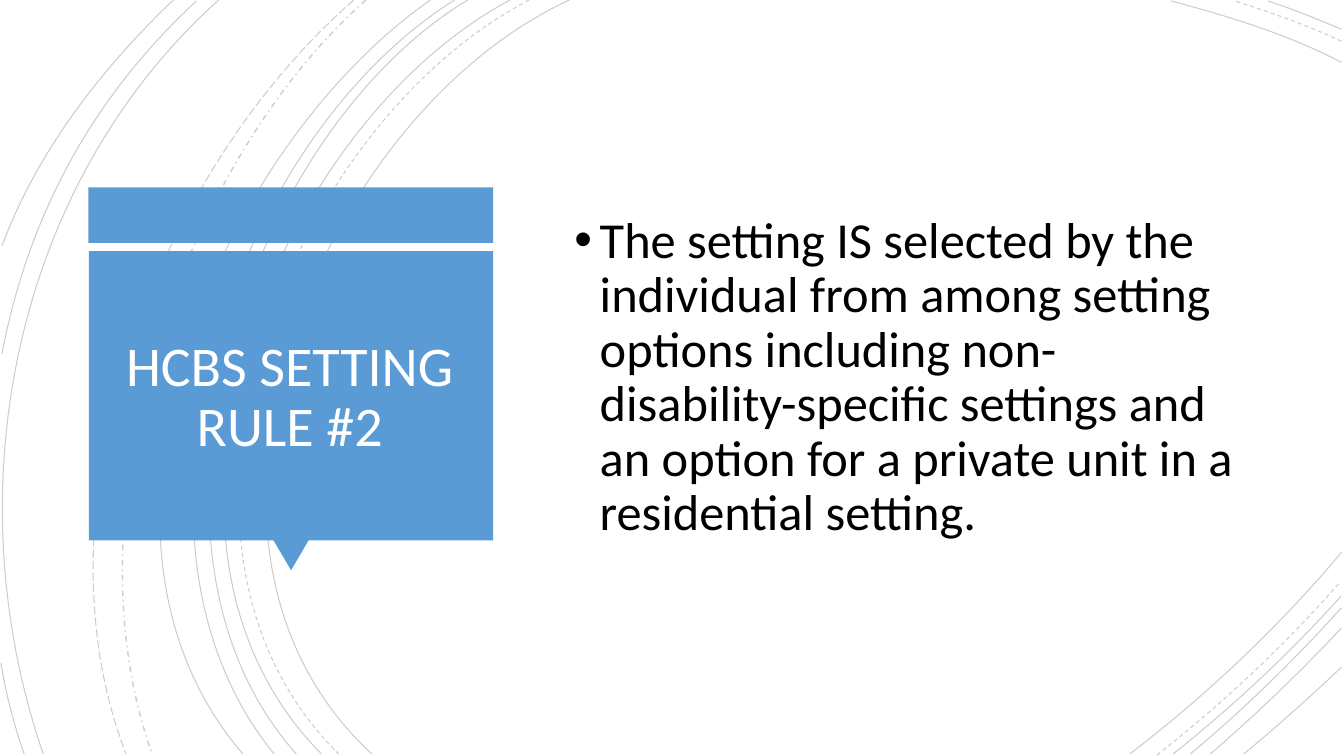
from lxml import etree
from pptx import Presentation
from pptx.dml.color import RGBColor
from pptx.enum import dml, shapes, text
from pptx.oxml import ns
from pptx.util import Cm, Pt

BLUE, WHITE, BLACK = "5B9BD5", "FFFFFF", "000000"
FONT = "Calibri"
SOLID, DASH = dml.MSO_LINE.SOLID, dml.MSO_LINE.DASH
LONG_DASH, DASH_DOT = dml.MSO_LINE.LONG_DASH, dml.MSO_LINE.DASH_DOT

# Background arcs: start, two control points and end, in inches
ARCS = [
    (SOLID, (5.65, 0), (3.15, 1.15), (1.43, 5.4), (3.69, 7.48)),
    (SOLID, (13.31, 0.62), (12.78, 0.34), (12.18, 0.16), (11.62, 0.01)),
    (SOLID, (11.21, 7.48), (11.97, 6.9), (12.69, 6.22), (13.31, 5.48)),
    (DASH, (5.25, 0), (2.85, 1.25), (1.23, 5.37), (3.36, 7.48)),
    (DASH, (13.31, 0.41), (12.97, 0.25), (12.6, 0.12), (12.25, 0.01)),
    (DASH, (11.48, 7.49), (12.13, 6.98), (12.75, 6.4), (13.3, 5.77)),
    (SOLID, (5.06, 0), (2.7, 1.27), (1.1, 5.37), (3.19, 7.48)),
    (SOLID, (13.31, 0.29), (13.07, 0.19), (12.83, 0.09), (12.58, 0.01)),
    (SOLID, (11.64, 7.48), (12.23, 7.01), (12.8, 6.48), (13.31, 5.91)),
    (SOLID, (4.64, 0), (2.44, 1.33), (1.1, 5.41), (2.94, 7.48)),
    (SOLID, (11.81, 7.48), (12.34, 7.04), (12.84, 6.55), (13.31, 6.03)),
    (SOLID, (4.51, 0), (2.31, 1.38), (0.97, 5.33), (2.72, 7.48)),
    (SOLID, (12.01, 7.48), (12.46, 7.09), (12.9, 6.67), (13.31, 6.23)),
    (SOLID, (4.27, 0), (2.17, 1.47), (0.53, 5.29), (2.41, 7.48)),
    (SOLID, (12.34, 7.48), (12.67, 7.21), (12.99, 6.92), (13.31, 6.62)),
    (DASH_DOT, (3.63, 0), (1.76, 1.66), (0.65, 5.09), (1.51, 7.48)),
    (LONG_DASH, (3.51, 0), (1.57, 1.69), (0.29, 4.99), (1.25, 7.48)),
    (SOLID, (2.17, 0), (0.11, 1.85), (-0.46, 4.9), (0.43, 7.48)),
    (SOLID, (1.95, 0.01), (0.92, 0.96), (0.28, 2.14), (0.02, 3.51)),
    (SOLID, (0.01, 6.58), (0.06, 6.89), (0.14, 7.19), (0.24, 7.48)),
    (SOLID, (1.72, 0), (1, 0.69), (0.37, 1.5), (0.02, 2.44)),
]


def rgb(hex_color):
    return RGBColor.from_string(hex_color)


def add_arc(parent, dash, *points):
    """Draw a faint cubic Bézier curve."""
    start, *rest = [(Cm(x * 2.54), Cm(y * 2.54)) for x, y in points]
    builder = parent.build_freeform(*start, scale=1)
    builder.add_line_segments(rest, close=False)
    sp = builder.convert_to_shape()
    sp.shadow.inherit = False
    sp.fill.background()
    sp.line.width = Pt(1 if dash == DASH_DOT else 0.75)
    sp.line.dash_style = dash
    sp.line.color.rgb = rgb(BLACK)
    color = sp.line._ln.find(".//" + ns.qn("a:srgbClr"))
    etree.SubElement(color, ns.qn("a:alpha"), val="20000")

    # Turn the three straight segments into one curve
    path = sp._element.find(".//" + ns.qn("a:path"))
    curve = etree.SubElement(path, ns.qn("a:cubicBezTo"))
    for segment in path.findall(ns.qn("a:lnTo")):
        curve.append(segment[0])
        path.remove(segment)


def add_block(parent, kind, left, top, width, height, rotation=0):
    sp = parent.add_shape(kind, Cm(left), Cm(top), Cm(width), Cm(height))
    sp.shadow.inherit = False
    sp.fill.solid()
    sp.fill.fore_color.rgb = rgb(BLUE)
    sp.line.fill.background()
    sp.rotation = rotation


def fill_placeholder(slide, sp, box, words, size, color, align):
    """Place the placeholder in front of the artwork and write its text."""
    sp.left, sp.top, sp.width, sp.height = map(Cm, box)
    slide.shapes._spTree.append(sp._element)
    tf = sp.text_frame
    tf.word_wrap = True
    tf.auto_size = text.MSO_AUTO_SIZE.NONE
    tf.vertical_anchor = text.MSO_ANCHOR.MIDDLE
    p = tf.paragraphs[0]
    p.alignment = align
    p.line_spacing = 0.9
    r = p.add_run()
    r.text = words
    r.font.name, r.font.size = FONT, Pt(size)
    r.font.color.rgb = rgb(color)
    return p


def add_bullet(p, indent):
    p.space_before = Pt(10)
    pPr = p._p.get_or_add_pPr()
    pPr.set("marL", str(Cm(indent)))
    pPr.set("indent", str(-Cm(indent)))
    etree.SubElement(pPr, ns.qn("a:buFont"), typeface="Arial")
    etree.SubElement(pPr, ns.qn("a:buChar"), char="•")


def main():
    prs = Presentation()
    prs.slide_width, prs.slide_height = Cm(33.87), Cm(19.05)
    slide = prs.slides.add_slide(prs.slide_layouts[1])
    slide.background.fill.solid()
    slide.background.fill.fore_color.rgb = rgb(WHITE)

    arcs = slide.shapes.add_group_shape().shapes
    for arc in ARCS:
        add_arc(arcs, *arc)

    panel = slide.shapes.add_group_shape().shapes
    rect, triangle = shapes.MSO_SHAPE.RECTANGLE, shapes.MSO_SHAPE.ISOSCELES_TRIANGLE
    add_block(panel, rect, 2.23, 4.72, 10.2, 1.4)
    add_block(panel, triangle, 6.89, 13.61, 0.89, 0.76, rotation=180)
    add_block(panel, rect, 2.24, 6.33, 10.19, 7.29)

    fill_placeholder(slide, slide.shapes.title, (2.51, 6.71, 9.58, 6.65),
                     "HCBS SETTING RULE #2", 40, WHITE, text.PP_ALIGN.CENTER)
    p = fill_placeholder(
        slide, slide.placeholders[1], (14.22, 2.24, 17.45, 14.58),
        "The setting IS selected by the individual from among setting options "
        "including non-disability-specific settings and an option for a private "
        "unit in a residential setting.", 36, BLACK, text.PP_ALIGN.LEFT)
    add_bullet(p, 0.64)

    prs.save("out.pptx")


if __name__ == "__main__":
    main()
